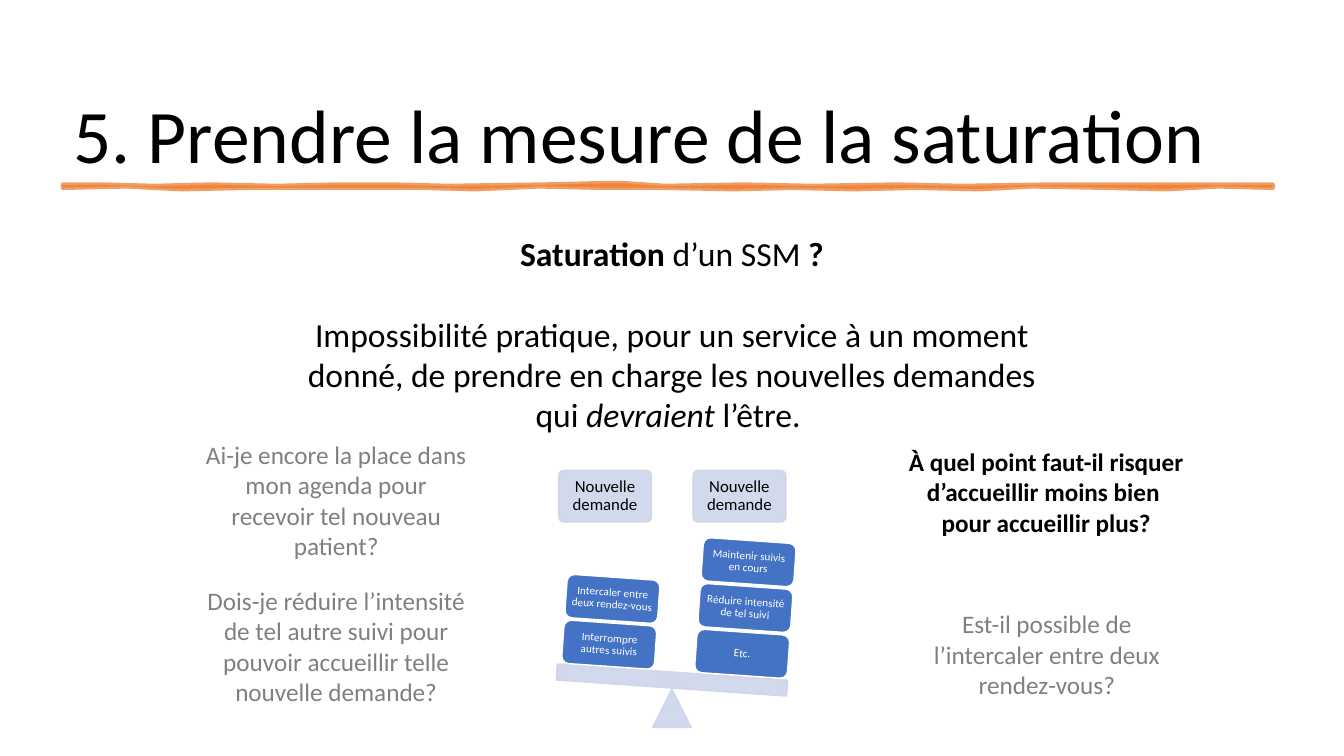
"""Builds the slide on measuring the saturation of a mental health service."""
from math import radians, tan

from lxml.etree import SubElement
from pptx import Presentation
from pptx.dml.color import RGBColor
from pptx.enum.shapes import MSO_SHAPE
from pptx.enum.text import MSO_ANCHOR, PP_ALIGN
from pptx.oxml.ns import qn
from pptx.util import Pt

BLACK = RGBColor(0, 0, 0)
GREY = RGBColor(0x80, 0x80, 0x80)
WHITE = RGBColor(0xFF, 0xFF, 0xFF)
BLUE = RGBColor(0x44, 0x72, 0xC4)
PALE_BLUE = RGBColor(0xCF, 0xD5, 0xEA)
ORANGE = RGBColor(0xED, 0x7D, 0x31)

BOLD, ITALIC, PLAIN = {"bold": True}, {"italic": True}, {}

TITLE = "5. Prendre la mesure de la saturation"
DEFINITION = [
    [("Saturation", BOLD), (" d’un SSM ", PLAIN), ("?", BOLD)],
    [("Impossibilité pratique, pour un service à un moment donné, "
      "de prendre en charge les nouvelles demandes qui", PLAIN),
     (" devraient ", ITALIC), ("l’être. ", PLAIN)],
]
QUESTIONS = [
    ((139.7, 310.3, 200.9, 94.3), GREY, PLAIN,
     "Ai-je encore la place dans mon agenda pour recevoir tel nouveau patient?"),
    ((647.3, 431.3, 200.9, 72.7), GREY, PLAIN,
     "Est-il possible de l’intercaler entre deux rendez-vous?"),
    ((139.7, 414.7, 200.9, 94.3), GREY, PLAIN,
     "Dois-je réduire l’intensité de tel autre suivi pour pouvoir "
     "accueillir telle nouvelle demande?"),
    ((626.4, 315.4, 241.9, 72.7), BLACK, BOLD,
     "À quel point faut-il risquer d’accueillir moins bien \npour accueillir plus?"),
]
REQUESTS = [(399, "Nouvelle demande"), (495, "Nouvelle demande")]
WEIGHTS = [
    ((402, 445), ["Interrompre autres suivis", "Intercaler entre deux rendez-vous"]),
    ((497, 451.5), ["Etc.", "Réduire intensité de tel suivi", "Maintenir suivis en cours"]),
]
STROKE_TOP = [
    (45.4, 132.5), (75, 132), (110, 132.8), (150, 131.8), (198, 133), (240, 132),
    (281, 131.6), (320, 132.6), (389, 132), (430, 131.2), (445, 131.2), (475, 132.6),
    (531, 132), (580, 132.7), (640, 132), (687, 133), (750, 131.9), (814, 132.5),
    (860, 132), (909.4, 132.5),
]
STROKE_BOTTOM = [
    (909.4, 133.9), (870, 133.4), (833, 134.8), (790, 133.9), (737, 133.4),
    (700, 134.6), (654, 133.9), (610, 134.7), (565, 133.5), (525, 134.7),
    (475, 133.5), (430, 134.5), (385, 133.4), (340, 134.6), (302, 133.9),
    (250, 134.4), (177, 133.9), (130, 135), (90, 133.3), (45.4, 133.9),
]
TILT = 4
TILE_SIZE = (66.4, 31)
TILE_STEP = 32.7


def fade(colored_xml, percent):
    for color in colored_xml.iter(qn("a:srgbClr")):
        SubElement(color, qn("a:alpha")).set("val", str(percent * 1000))


def paint(shape, fill, line, width, opacity=100):
    shape.shadow.inherit = False
    shape.fill.solid()
    shape.fill.fore_color.rgb = fill
    shape.line.color.rgb = line
    shape.line.width = Pt(width)
    if opacity < 100:
        fade(shape._element.spPr, opacity)


def write(frame, paragraphs, size, color, frame_format=PLAIN, paragraph_format=PLAIN):
    frame.word_wrap = True
    for name, value in frame_format.items():
        setattr(frame, name, value)
    for index, runs in enumerate(paragraphs):
        paragraph = frame.add_paragraph() if index else frame.paragraphs[0]
        for name, value in paragraph_format.items():
            setattr(paragraph, name, value)
        for text, style in runs:
            for row, line in enumerate(text.split("\n")):
                if row:
                    paragraph.add_line_break()
                run = paragraph.add_run()
                run.text = line
                run.font.color.rgb = color
                for name, value in {"name": "Calibri", "size": Pt(size), **style}.items():
                    setattr(run.font, name, value)


def add_text(slide, box, *content):
    frame = slide.shapes.add_textbox(*map(Pt, box)).text_frame
    write(frame, *content)
    return frame


def add_block(slide, kind, box, fill=PALE_BLUE, line=PALE_BLUE, opacity=90, tilt=0):
    block = slide.shapes.add_shape(kind, *map(Pt, box))
    block.rotation = tilt
    paint(block, fill, line, 1, opacity)
    return block


def label(block, text, size, color, inset):
    margins = {f"margin_{side}": Pt(inset) for side in ("left", "right", "top", "bottom")}
    write(block.text_frame, [[(text, PLAIN)]], size, color,
          {"vertical_anchor": MSO_ANCHOR.MIDDLE, **margins},
          {"alignment": PP_ALIGN.CENTER, "line_spacing": 0.9})


def add_underline(slide):
    start, *rest = STROKE_TOP + STROKE_BOTTOM
    outline = slide.shapes.build_freeform(*start, scale=Pt(1))
    outline.add_line_segments(rest, close=True)
    paint(outline.convert_to_shape(), ORANGE, ORANGE, 3.5, 75)


def add_scale(slide):
    for left, text in REQUESTS:
        request = add_block(slide, MSO_SHAPE.ROUNDED_RECTANGLE, (left, 336, 66.4, 36.9))
        request.adjustments[0] = 0.1
        label(request, text, 12, BLACK, 3.6)
    add_block(slide, MSO_SHAPE.ISOSCELES_TRIANGLE, (466.2, 492, 27.6, 27.6))
    add_block(slide, MSO_SHAPE.RECTANGLE, (397.5, 480, 165, 11.5), tilt=TILT)
    for (left, top), tasks in WEIGHTS:
        for level, task in enumerate(tasks):
            rise = level * TILE_STEP
            box = (left + rise * tan(radians(TILT)), top - rise, *TILE_SIZE)
            tile = add_block(slide, MSO_SHAPE.ROUNDED_RECTANGLE, box, BLUE, WHITE, 100, TILT)
            label(tile, task, 8, WHITE, 2.2)


def main():
    presentation = Presentation()
    presentation.slide_width, presentation.slide_height = Pt(960), Pt(540)
    slide = presentation.slides.add_slide(presentation.slide_layouts[6])
    centered = {"alignment": PP_ALIGN.CENTER}
    add_text(slide, (45.4, 18.7, 867.6, 113), [[(TITLE, PLAIN)]], 54, BLACK,
             {"vertical_anchor": MSO_ANCHOR.BOTTOM}, {"line_spacing": 0.9})
    add_underline(slide)
    definition = add_text(slide, (212.4, 162.7, 535, 152.6), DEFINITION, 24, BLACK,
                          PLAIN, centered)
    definition.paragraphs[1].space_before = Pt(29)
    add_scale(slide)
    for box, color, style, question in QUESTIONS:
        add_text(slide, box, [[(question, style)]], 18, color, PLAIN, centered)
    presentation.save("out.pptx")


if __name__ == "__main__":
    main()
